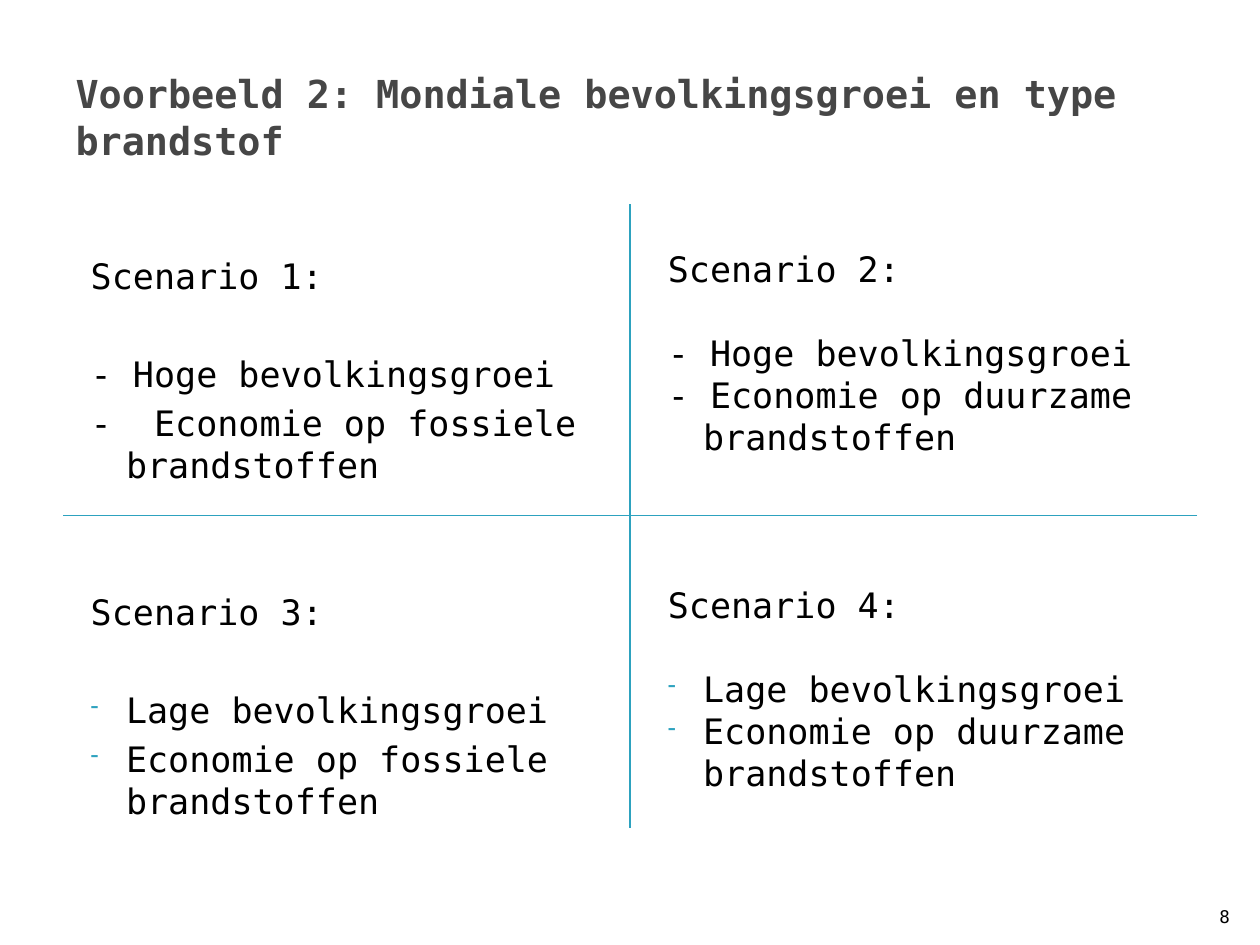
import pptx
import pptx.util
import pptx.dml.color
import pptx.enum.shapes
import pptx.enum.text
import pptx.oxml.ns
from lxml import etree

Pt = pptx.util.Pt
ALIGN = pptx.enum.text.PP_ALIGN
ANCHOR = pptx.enum.text.MSO_ANCHOR

COLORS = {"title": "464646", "text": "000000", "accent": "2DA2BF"}
FONT = "DejaVu Sans Mono"
TITLE = "Voorbeeld 2: Mondiale bevolkingsgroei en type brandstof"
PAGE_NUMBER = "8"

SCENARIOS = [
    ("Scenario 1:", ["- Hoge bevolkingsgroei", "-  Economie op fossiele brandstoffen"]),
    ("Scenario 2:", ["- Hoge bevolkingsgroei", "- Economie op duurzame brandstoffen"]),
    ("Scenario 3:", ["Lage bevolkingsgroei", "Economie op fossiele brandstoffen"]),
    ("Scenario 4:", ["Lage bevolkingsgroei", "Economie op duurzame brandstoffen"]),
]
COLUMNS = [
    {"left": 43.2, "top": 145.4, "gap": 4, "heading_gap": 32},
    {"left": 372.96, "top": 141.4, "gap": 0, "heading_gap": 24},
]
ROW_STEP = 192
BOX_WIDTH, BOX_HEIGHT = 303.84, 132
AXES = [(684, 294.5, 36, 294.5), (360, 116.64, 360, 473.04)]


def apply_format(target, values):
    for name, value in values.items():
        setattr(target, name, value)


def style_font(para, size, color, bold=False):
    apply_format(para.font, {"name": FONT, "size": Pt(size), "bold": bold})
    para.font.color.rgb = pptx.dml.color.RGBColor.from_string(COLORS[color])


def add_text_box(page, left, top, width, height):
    box = page.shapes.add_textbox(Pt(left), Pt(top), Pt(width), Pt(height))
    box.text_frame.word_wrap = True
    return box


def set_hanging(para, dashed):
    props = para._p.get_or_add_pPr()
    props.set("marL", str(Pt(28.8)))
    props.set("indent", str(Pt(-20.16)))
    qn = pptx.oxml.ns.qn
    if dashed:
        color = etree.SubElement(props, qn("a:buClr"))
        etree.SubElement(color, qn("a:srgbClr"), val=COLORS["accent"])
        etree.SubElement(props, qn("a:buSzPct"), val="68000")
        etree.SubElement(props, qn("a:buChar"), char="-")
    else:
        etree.SubElement(props, qn("a:buNone"))


def add_scenario(page, index, heading, points):
    row, column = divmod(index, len(COLUMNS))
    place = COLUMNS[column]
    box = add_text_box(page, place["left"], place["top"] + row * ROW_STEP, BOX_WIDTH, BOX_HEIGHT)
    frame = box.text_frame
    apply_format(frame, dict.fromkeys(
        ("margin_left", "margin_top", "margin_right", "margin_bottom"), 0))
    gaps = [0, place["heading_gap"], place["gap"]]
    for order, (text, gap) in enumerate(zip([heading, *points], gaps)):
        para = frame.add_paragraph() if order else frame.paragraphs[0]
        para.text = text
        set_hanging(para, dashed=row == 1 and order > 0)
        para.space_before = Pt(gap)
        style_font(para, 20, "text")


def add_axis(page, ends):
    axis = page.shapes.add_connector(
        pptx.enum.shapes.MSO_CONNECTOR.STRAIGHT, *map(Pt, ends))
    axis.line.width = Pt(0.75)
    axis.line.color.rgb = pptx.dml.color.RGBColor.from_string(COLORS["accent"])
    etree.SubElement(axis._element.spPr, pptx.oxml.ns.qn("a:effectLst"))


def main():
    deck = pptx.Presentation()
    apply_format(deck, {"slide_width": Pt(720), "slide_height": Pt(540)})
    page = deck.slides.add_slide(deck.slide_layouts[5])

    title = page.shapes.title
    apply_format(title, {"left": Pt(36), "top": Pt(21.6), "width": Pt(648), "height": Pt(90)})
    title.text_frame.text = TITLE
    apply_format(title.text_frame, {
        "word_wrap": True,
        "vertical_anchor": ANCHOR.MIDDLE,
        "auto_size": pptx.enum.text.MSO_AUTO_SIZE.NONE,
    })
    title_para = title.text_frame.paragraphs[0]
    title_para.alignment = ALIGN.LEFT
    style_font(title_para, 22, "title", bold=True)

    for index, (heading, points) in enumerate(SCENARIOS):
        add_scenario(page, index, heading, points)
    for ends in AXES:
        add_axis(page, ends)

    number = add_text_box(page, 681.12, 504.72, 28.8, 28.8)
    number.text_frame.text = PAGE_NUMBER
    number.text_frame.vertical_anchor = ANCHOR.BOTTOM
    number_para = number.text_frame.paragraphs[0]
    number_para.alignment = ALIGN.RIGHT
    style_font(number_para, 10, "text")

    deck.save("out.pptx")


if __name__ == "__main__":
    main()
